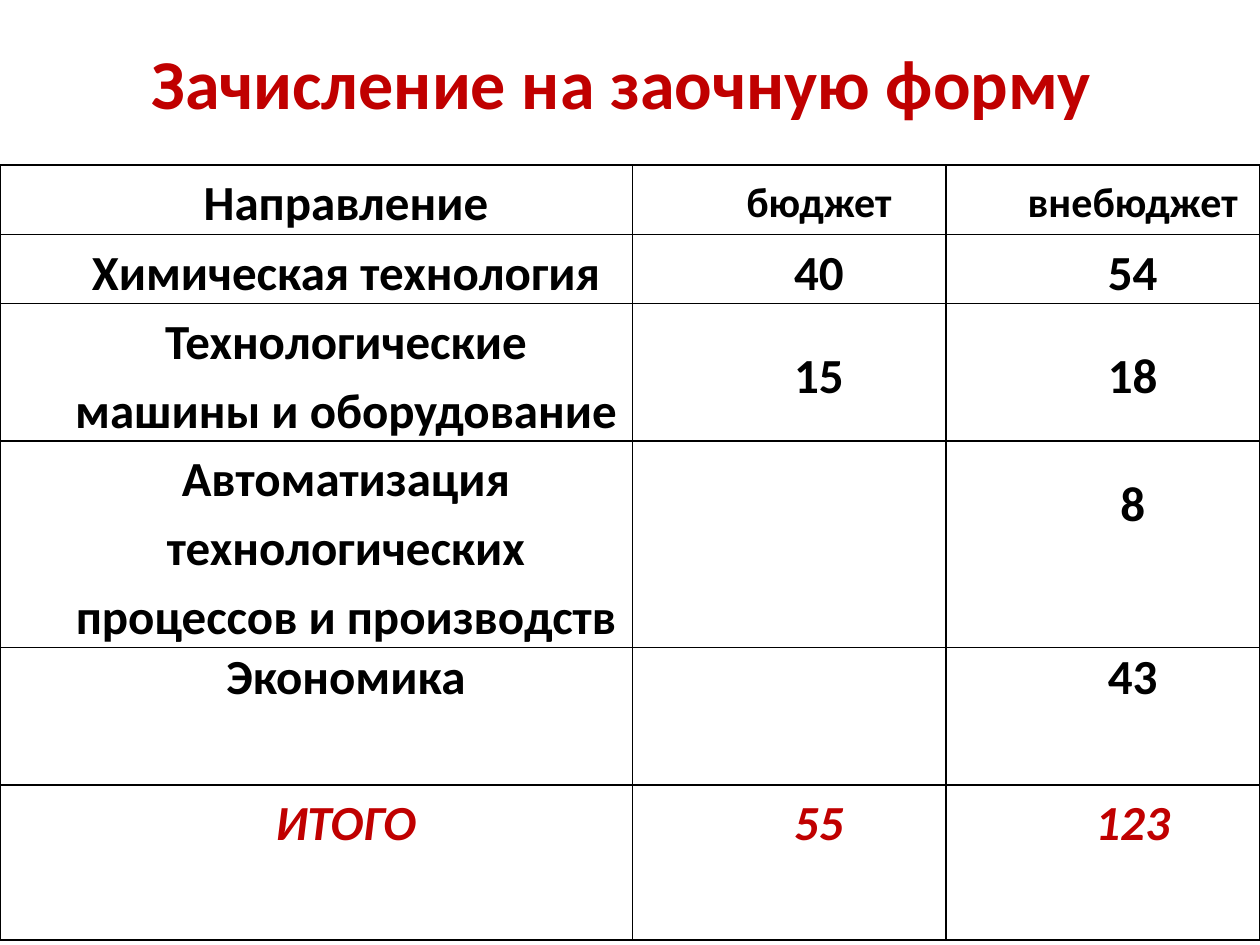
from lxml import etree
from pptx import Presentation
from pptx.dml.color import RGBColor
from pptx.enum.text import MSO_ANCHOR, PP_ALIGN
from pptx.oxml.ns import qn
from pptx.util import Inches, Pt

CENTER = PP_ALIGN.CENTER
TOP, MIDDLE = MSO_ANCHOR.TOP, MSO_ANCHOR.MIDDLE
FONT, BLACK, RED = "Calibri", "000000", "C00000"

# Content
TITLE = "Зачисление на заочную форму"
ROWS = [
    ("Направление", "бюджет", "внебюджет"),
    ("Химическая технология", "40", "54"),
    ("Технологические машины и оборудование", "15", "18"),
    ("Автоматизация технологических процессов и производств", "", "8"),
    ("Экономика", "", "43"),
    ("ИТОГО", "55", "123"),
]
COLUMN_WIDTHS = [5.02, 2.49, 2.49]
ROW_HEIGHTS = [0.55, 0.55, 1.09, 1.64, 1.09, 1.23]
TABLE_TOP = 1.31
AUTOMATION, ECONOMICS, TOTAL = 3, 4, 5


def color(value):
    return RGBColor.from_string(value)


def add_span(para, text, size, shade=BLACK, bold=True, italic=False):
    span = para.add_run()
    span.text = text
    font = span.font
    font.name, font.size = FONT, Pt(size)
    font.bold, font.italic = bold, italic
    font.color.rgb = color(shade)


def add_borders(cell):
    properties = cell._tc.get_or_add_tcPr()
    for side in ("lnL", "lnR", "lnT", "lnB"):
        line = etree.SubElement(properties, qn("a:" + side), w=str(Pt(1)))
        fill = etree.SubElement(line, qn("a:solidFill"))
        etree.SubElement(fill, qn("a:srgbClr"), val=BLACK)


def fill_cell(cell, text, row, column):
    add_borders(cell)
    cell.fill.background()
    cell.margin_left = cell.margin_right = Inches(0.07)
    cell.margin_top = cell.margin_bottom = 0
    cell.vertical_anchor = TOP if row >= ECONOMICS else MIDDLE
    if not text:
        return
    if row == AUTOMATION and column:
        cell.margin_bottom = Inches(0.7)  # lifts the number above the middle
    para = cell.text_frame.paragraphs[0]
    para.alignment = CENTER
    para.line_spacing = 1.0 if row == ECONOMICS else 1.15
    para.space_after = Pt(10)
    para._p.get_or_add_pPr().set("marL", str(Inches(0.47)))
    total = row == TOTAL
    size = 24 if row == 0 and column else 28
    add_span(para, text, size, RED if total else BLACK, italic=total)


deck = Presentation()
deck.slide_width, deck.slide_height = Inches(10), Inches(7.5)
page = deck.slides.add_slide(deck.slide_layouts[6])

# Title
box = page.shapes.add_textbox(0, 0, Inches(10), Inches(1.25))
frame = box.text_frame
frame.word_wrap = True
frame.vertical_anchor = MIDDLE
heading = frame.paragraphs[0]
heading.alignment = CENTER
add_span(heading, TITLE, 40, RED)
add_span(heading, " ", 44, RED)

# Enrolment table
table = page.shapes.add_table(
    len(ROWS), len(COLUMN_WIDTHS), 0, Inches(TABLE_TOP),
    Inches(sum(COLUMN_WIDTHS)), Inches(sum(ROW_HEIGHTS))).table
table.first_row = table.horz_banding = False
for column, width in enumerate(COLUMN_WIDTHS):
    table.columns[column].width = Inches(width)
for row, (height, texts) in enumerate(zip(ROW_HEIGHTS, ROWS)):
    table.rows[row].height = Inches(height)
    for column, text in enumerate(texts):
        fill_cell(table.cell(row, column), text, row, column)

deck.save("out.pptx")
